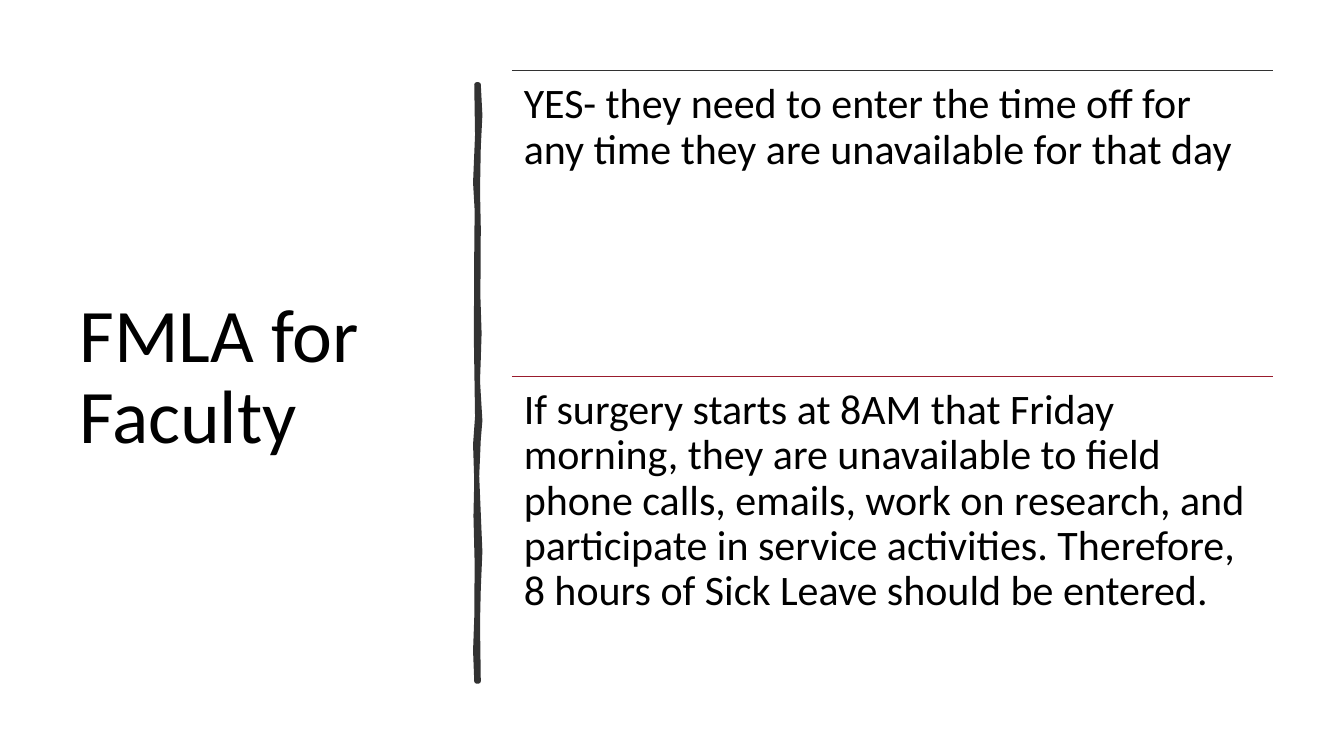
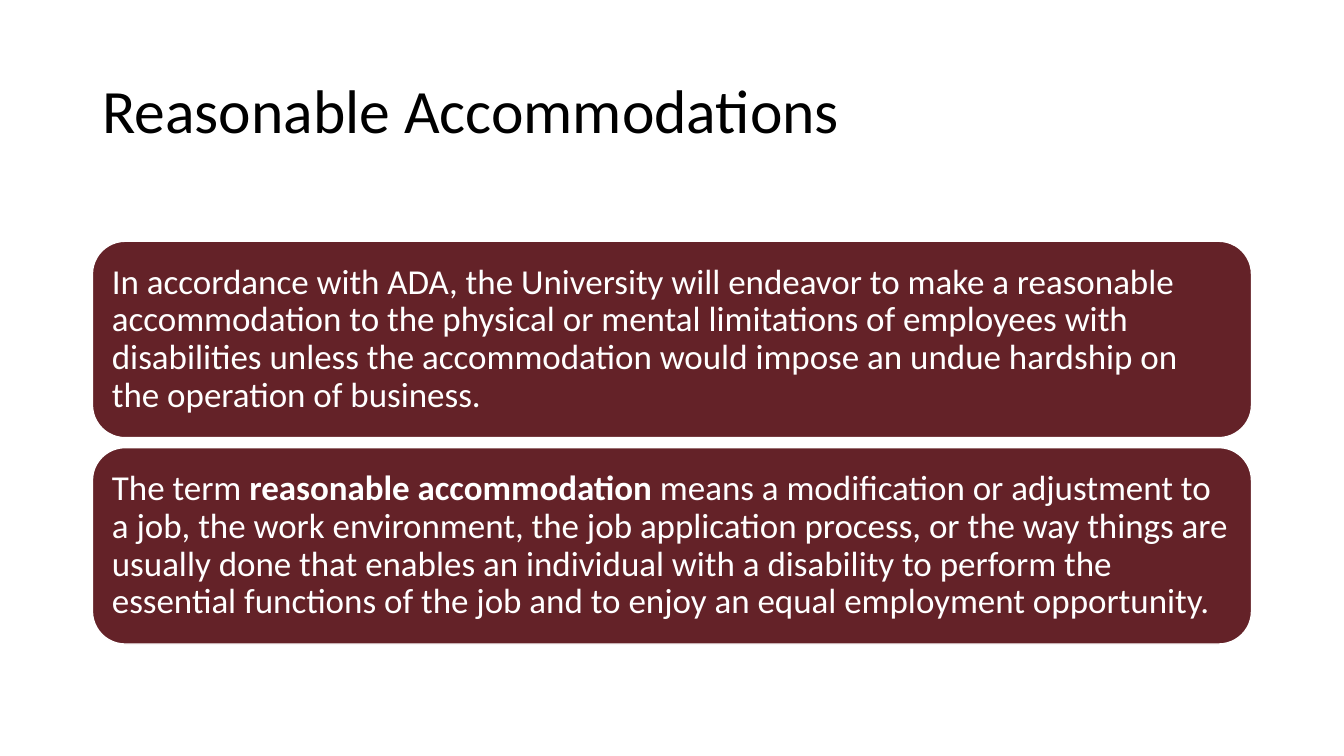
from dataclasses import dataclass

from lxml import etree
from pptx import Presentation
from pptx import util as u
from pptx.dml.color import RGBColor
from pptx.enum import shapes, text
from pptx.oxml import ns


@dataclass(frozen=True)
class Theme:
    font: str = "Calibri"
    ink: str = "000000"
    paper: str = "FFFFFF"
    dark: str = "323232"
    red: str = "991B2D"
    wine: str = "642228"
    huge: float = 54
    head: float = 44
    large: float = 30
    small: float = 25
    rule: float = 1
    brush: float = 3.25


class Deck:
    def __init__(self, theme):
        self.theme = theme
        self.show = Presentation()
        self.show.slide_width = u.Cm(33.87)
        self.show.slide_height = u.Cm(19.05)
        self.slide = None

    def page(self):
        self.slide = self.show.slides.add_slide(self.show.slide_layouts[5])

    def label(self, shape, runs, size, color, anchor, inset):
        frame = shape.text_frame
        frame.word_wrap = True
        frame.auto_size = text.MSO_AUTO_SIZE.NONE
        frame.vertical_anchor = anchor
        frame.margin_left = frame.margin_right = u.Cm(inset[0])
        frame.margin_top = frame.margin_bottom = u.Cm(inset[1])
        para = frame.paragraphs[0]
        para.alignment = text.PP_ALIGN.LEFT
        para.line_spacing = 0.9
        para.font.name = self.theme.font
        para.font.size = u.Pt(size)
        para.font.color.rgb = RGBColor.from_string(color)
        for words, bold in runs:
            run = para.add_run()
            run.text = words
            if bold:
                run.font.bold = True

    def paint(self, shape, fill, line, width):
        shape.shadow.inherit = False
        shape.fill.solid()
        shape.fill.fore_color.rgb = RGBColor.from_string(fill)
        shape.line.color.rgb = RGBColor.from_string(line)
        shape.line.width = u.Pt(width)

    def title(self, words, box, size):
        shape = self.slide.shapes.title
        shape.left, shape.top, shape.width, shape.height = map(u.Cm, box)
        self.label(shape, [(words, False)], size, self.theme.ink,
                   text.MSO_ANCHOR.MIDDLE, (0.25, 0.13))

    def rule(self, left, top, width, color):
        line = self.slide.shapes.add_connector(
            shapes.MSO_CONNECTOR.STRAIGHT,
            u.Cm(left), u.Cm(top), u.Cm(left + width), u.Cm(top))
        line.line.color.rgb = RGBColor.from_string(color)
        line.line.width = u.Pt(self.theme.rule)
        etree.SubElement(line._element.spPr, ns.qn("a:effectLst"))

    def note(self, words, box):
        shape = self.slide.shapes.add_textbox(*map(u.Cm, box))
        self.label(shape, [(words, False)], self.theme.large, self.theme.ink,
                   text.MSO_ANCHOR.TOP, (0.3, 0.3))

    def card(self, runs, box):
        shape = self.slide.shapes.add_shape(
            shapes.MSO_SHAPE.ROUNDED_RECTANGLE, *map(u.Cm, box))
        self.paint(shape, self.theme.wine, self.theme.paper, self.theme.rule)
        self.label(shape, runs, self.theme.small, self.theme.paper,
                   text.MSO_ANCHOR.MIDDLE, (0.25, 0.25))

    def stroke(self, points):
        first, *rest = [(u.Cm(x), u.Cm(y)) for x, y in points]
        build = self.slide.shapes.build_freeform(*first)
        build.add_line_segments(rest, close=True)
        self.paint(build.convert_to_shape(), self.theme.dark,
                   self.theme.dark, self.theme.brush)


def leave(deck):
    theme = deck.theme
    deck.page()
    deck.title("FMLA for Faculty", (1.75, 1.78, 9.5, 15.52), theme.huge)
    east = [(12.06, 2.13), (12.1, 2.9), (12.06, 3.7), (12.04, 4.8),
            (12.06, 5.74), (12.05, 7.47), (12.08, 8.4), (12.06, 9.04),
            (12.04, 9.6), (12.1, 10.6), (12.06, 11.07), (12.02, 12),
            (12.06, 12.95), (12.1, 13.9), (12.06, 14.83), (12.04, 15.7),
            (12.06, 17.17)]
    west = [(12.01, 17.17), (11.98, 16.4), (12.01, 15.57), (12.02, 14.2),
            (11.99, 13), (12.01, 12.12), (11.98, 11.2), (12.03, 10.5),
            (12, 8.51), (12.01, 6.35), (12.02, 5.3), (11.98, 4.6),
            (12.03, 3.4), (12.01, 2.13)]
    deck.stroke(east + west)
    left, top, width, step = 12.9, 1.78, 19.18, 7.7
    rows = [
        (theme.dark, "YES- they need to enter the time off for any time "
         "they are unavailable for that day"),
        (theme.red, "If surgery starts at 8AM that Friday morning, they are "
         "unavailable to field phone calls, emails, work on research, and "
         "participate in service activities. Therefore, 8 hours of Sick "
         "Leave should be entered."),
    ]
    for i, (color, words) in enumerate(rows):
        y = top + i * step
        deck.rule(left, y, width, color)
        deck.note(words, (left, y, width, step))


def access(deck):
    deck.page()
    left, width = 2.33, 29.21
    deck.title("Reasonable Accommodations", (left, 1.01, width, 3.68),
               deck.theme.head)
    top, height, gap = 6.08, 4.95, 0.25
    cards = [
        [("In accordance with ADA, the University will endeavor to make a "
          "reasonable accommodation to the physical or mental limitations of "
          "employees with disabilities unless the accommodation would impose "
          "an undue hardship on the operation of business.", False)],
        [("The term ", False),
         ("reasonable accommodation", True),
         (" means a modification or adjustment to a job, the work "
          "environment, the job application process, or the way things are "
          "usually done that enables an individual with a disability to "
          "perform the essential functions of the job and to enjoy an equal "
          "employment opportunity.", False)],
    ]
    for i, runs in enumerate(cards):
        deck.card(runs, (left, top + i * (height + gap), width, height))


def main():
    deck = Deck(Theme())
    leave(deck)
    access(deck)
    deck.show.save("out.pptx")


if __name__ == "__main__":
    main()
